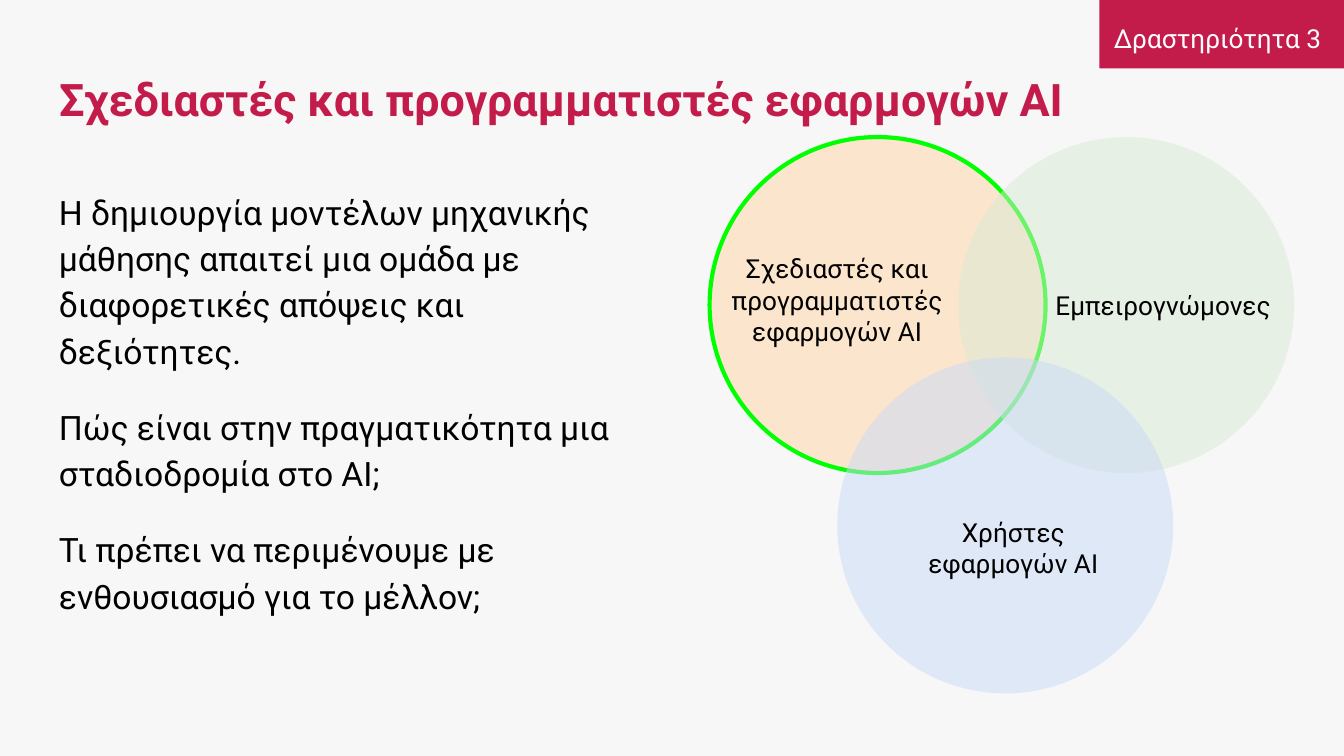
from lxml.etree import SubElement
from pptx import Presentation
from pptx.dml.color import RGBColor
from pptx.enum.shapes import MSO_SHAPE
from pptx.enum.text import MSO_ANCHOR, MSO_AUTO_SIZE, PP_ALIGN
from pptx.oxml.ns import qn
from pptx.util import Inches, Pt

FONT = "Roboto"
CRIMSON = "C31C4A"
TITLE_ONLY = 5
DIAMETER = 2.5

# left, top, fill, opacity in percent, outline
CIRCLES = [
    (5.28, 1.02, "FCE5CD", 100, "00FF00"),
    (7.13, 1.02, "D9EAD3", 50, None),
    (6.23, 2.66, "C9DAF8", 50, None),
]

# text, left, top, width, height
CIRCLE_LABELS = [
    ("Σχεδιαστές και προγραμματιστές εφαρμογών AI", 5.33, 1.78, 1.8, 1.14),
    ("Χρήστες εφαρμογών AI", 6.64, 3.74, 1.8, 0.67),
    ("Εμπειρογνώμονες", 7.73, 2.05, 1.85, 0.44),
]

BODY = [
    "Η δημιουργία μοντέλων μηχανικής μάθησης απαιτεί μια ομάδα με "
    "διαφορετικές απόψεις και δεξιότητες.",
    "Πώς είναι στην πραγματικότητα μια σταδιοδρομία στο AI;",
    "Τι πρέπει να περιμένουμε με ενθουσιασμό για το μέλλον;",
]


def color(value):
    return RGBColor.from_string(value)


def add_filled_shape(page, kind, left, top, width, height, fill, opacity=100, outline=None):
    shape = page.shapes.add_shape(
        kind, Inches(left), Inches(top), Inches(width), Inches(height))
    shape.shadow.inherit = False
    shape.fill.solid()
    shape.fill.fore_color.rgb = color(fill)
    if opacity < 100:
        fill_color = shape.fill._xPr.find(qn("a:solidFill"))[0]
        SubElement(fill_color, qn("a:alpha"), val=str(opacity * 1000))
    if outline:
        shape.line.color.rgb = color(outline)
        shape.line.width = Pt(2.25)
    else:
        shape.line.fill.background()


def write_text(box, *paragraphs, size=14, text_color="000000", bold=False,
               align=PP_ALIGN.LEFT, anchor=MSO_ANCHOR.TOP, line_spacing=1.0, gap=0):
    """Fill a box with paragraphs; gap is the space in points between them."""
    frame = box.text_frame
    frame.word_wrap = True
    frame.auto_size = MSO_AUTO_SIZE.NONE
    frame.vertical_anchor = anchor
    frame.margin_left = frame.margin_right = Inches(0.1)
    frame.margin_top = frame.margin_bottom = Inches(0.1)
    for index, text in enumerate(paragraphs):
        para = frame.add_paragraph() if index else frame.paragraphs[0]
        para.alignment = align
        para.line_spacing = line_spacing
        para.space_before = Pt(gap if index else 0)
        span = para.add_run()
        span.text = text
        span.font.name = FONT
        span.font.size = Pt(size)
        span.font.bold = bold
        span.font.color.rgb = color(text_color)


def add_text(page, left, top, width, height, *paragraphs, **text_format):
    box = page.shapes.add_textbox(
        Inches(left), Inches(top), Inches(width), Inches(height))
    write_text(box, *paragraphs, **text_format)


def set_title(page, text):
    title = page.shapes.title
    title.left, title.top = Inches(0.34), Inches(0.35)
    title.width, title.height = Inches(9.32), Inches(0.76)
    write_text(title, text, size=24, text_color=CRIMSON, bold=True,
               anchor=MSO_ANCHOR.MIDDLE)


def add_activity_tag(page, text):
    add_filled_shape(page, MSO_SHAPE.RECTANGLE, 8.18, 0, 1.82, 0.51, CRIMSON)
    add_text(page, 8.18, 0.03, 1.76, 0.42, text, text_color="FFFFFF",
             align=PP_ALIGN.CENTER, line_spacing=1.15)


def add_venn_diagram(page):
    for left, top, fill, opacity, outline in CIRCLES:
        add_filled_shape(page, MSO_SHAPE.OVAL, left, top, DIAMETER, DIAMETER,
                         fill, opacity, outline)
    for text, *place in CIRCLE_LABELS:
        add_text(page, *place, text, align=PP_ALIGN.CENTER)


def main():
    deck = Presentation()
    deck.slide_width = Inches(10)
    deck.slide_height = Inches(10 * 9 / 16)
    page = deck.slides.add_slide(deck.slide_layouts[TITLE_ONLY])
    page.background.fill.solid()
    page.background.fill.fore_color.rgb = color("F7F7F7")

    set_title(page, "Σχεδιαστές και προγραμματιστές εφαρμογών AI")
    add_activity_tag(page, "Δραστηριότητα 3")
    add_venn_diagram(page)
    add_text(page, 0.34, 1.28, 4.48, 4, *BODY, size=18, line_spacing=1.15, gap=16)
    deck.save("out.pptx")


if __name__ == "__main__":
    main()
